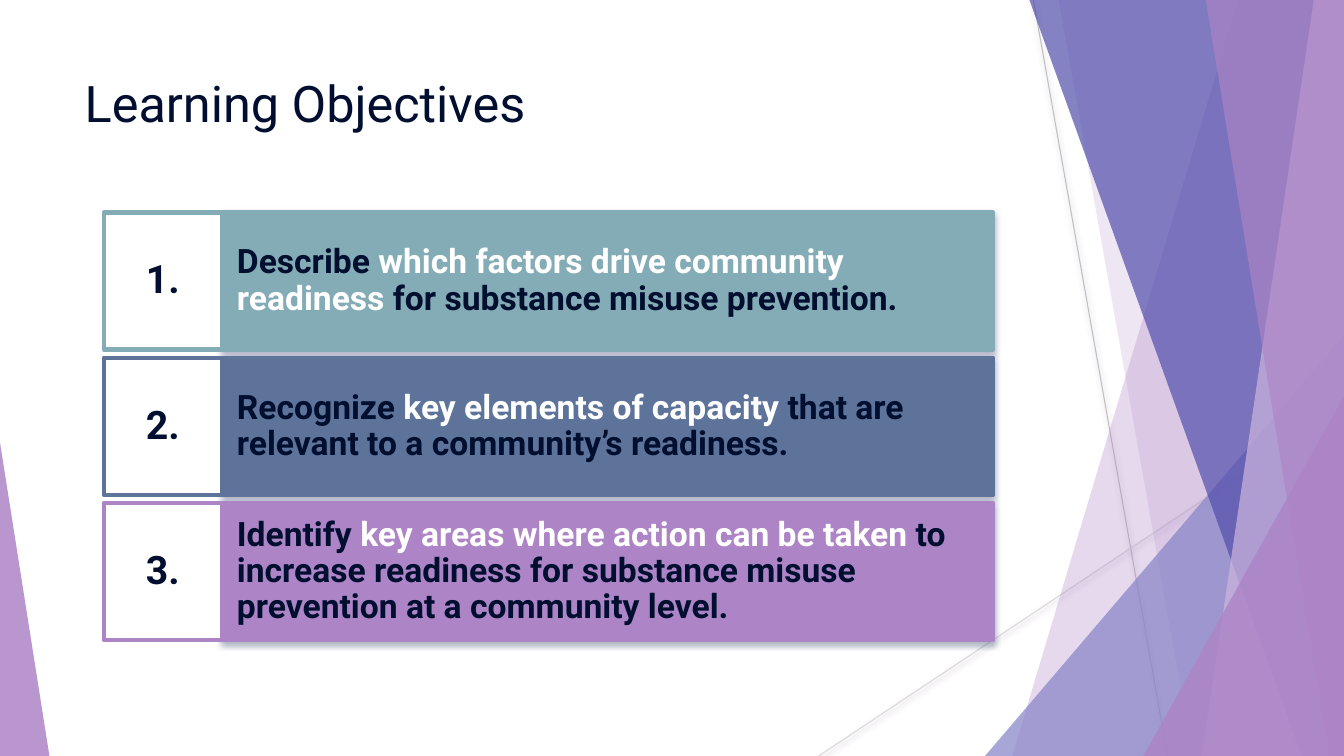
"""Build the learning objectives slide with its faceted purple backdrop."""
from dataclasses import dataclass

from lxml import etree
from pptx import Presentation
from pptx.dml.color import RGBColor
from pptx.enum.shapes import MSO_CONNECTOR, MSO_SHAPE
from pptx.enum.text import MSO_ANCHOR, MSO_AUTO_SIZE, PP_ALIGN
from pptx.oxml.ns import qn
from pptx.util import Inches, Pt

RECT, WEDGE = MSO_SHAPE.RECTANGLE, MSO_SHAPE.ISOSCELES_TRIANGLE
LINE = MSO_CONNECTOR.STRAIGHT
LEFT, MID = PP_ALIGN.LEFT, PP_ALIGN.CENTER
TOP, CORE = MSO_ANCHOR.TOP, MSO_ANCHOR.MIDDLE
WIDE, HIGH = 13.33, 7.5
FONT = "Roboto"
HUES = {
    "navy": "000E2F", "white": "FFFFFF", "teal": "84ACB6", "slate": "5D739A",
    "mauve": "AD84C6", "lilac": "CEB5DD", "haze": "8784C7", "iris": "524EAB",
    "grey": "BFBFBF", "pale": "D9D9D9", "dusk": "69447F",
    "plum": "474480", "grape": "374174", "ink": "2E4264",
}


@dataclass
class Ray:
    start: tuple[float, float]
    end: tuple[float, float]
    hue: str


@dataclass
class Band:
    """A facet that runs from the top edge to the foot along the right side."""
    head: float
    foot: float
    hue: str
    alpha: int


@dataclass
class Peak:
    """A right-angled wedge that stands on the bottom edge."""
    left: float
    top: float
    width: float
    lean: int
    hue: str
    alpha: int


@dataclass
class Goal:
    verb: str
    key: str
    rest: str
    hue: str
    shade: str


RAYS = [
    Ray((10.25, 0), (11.58, HIGH), "grey"),
    Ray((WIDE, 4.03), (8.12, HIGH), "pale"),
]
FACETS = [
    Band(12.28, 10.04, "mauve", 30),
    Band(10.5, 11.83, "mauve", 20),
    Peak(9.77, 3.33, 3.56, 1, "haze", 72),
    Band(10.21, 12.91, "iris", 70),
    Band(13.03, 11.92, "lilac", 70),
    Band(11.96, 13.18, "mauve", 65),
    Peak(11.34, 3.93, 1.99, 1, "mauve", 80),
    Peak(0, 4.39, 0.49, 0, "mauve", 85),
]
GOALS = [
    Goal("Describe ", "which factors drive community readiness",
         " for substance misuse prevention.", "teal", "plum"),
    Goal("Recognize ", "key elements of capacity ",
         "that are relevant to a community’s readiness.", "slate", "grape"),
    Goal("Identify ", "key areas where action can be taken ",
         "to increase readiness for substance misuse prevention at a "
         "community level.", "mauve", "ink"),
]


def tint(hue: str) -> RGBColor:
    """Return the named colour."""
    return RGBColor.from_string(HUES[hue])


def shade(item, hue: str) -> None:
    """Give an item a soft shadow straight below it."""
    glow = etree.SubElement(item._element.spPr, qn("a:effectLst"))
    drop = etree.SubElement(glow, qn("a:outerShdw"), blurRad=str(Pt(4)),
                            dist=str(Pt(2)), dir="5400000", rotWithShape="0")
    base = etree.SubElement(drop, qn("a:srgbClr"), val=HUES[hue])
    etree.SubElement(base, qn("a:alpha"), val="38000")


def write(item, *runs: tuple[str, str], size: int, bold: bool = False,
          align=LEFT, anchor=CORE, space: float = 1.0,
          inset: tuple[float, float] = (0.1, 0.05)) -> None:
    """Fill an item with one paragraph of coloured runs."""
    frame = item.text_frame
    frame.word_wrap, frame.auto_size = True, MSO_AUTO_SIZE.NONE
    frame.vertical_anchor = anchor
    frame.margin_left = frame.margin_right = Inches(inset[0])
    frame.margin_top = frame.margin_bottom = Inches(inset[1])
    para = frame.paragraphs[0]
    para.alignment, para.line_spacing = align, space
    for words, hue in runs:
        run = para.add_run()
        run.text = words
        run.font.name, run.font.size, run.font.bold = FONT, Pt(size), bold
        run.font.color.rgb = tint(hue)


def draw_ray(slide, ray: Ray) -> None:
    """Draw a thin backdrop line."""
    ends = [Inches(n) for n in (*ray.start, *ray.end)]
    line = slide.shapes.add_connector(LINE, *ends)
    line.line.color.rgb, line.line.width = tint(ray.hue), Pt(0.75)
    shade(line, "dusk")


def draw_facet(slide, facet: Band | Peak) -> None:
    """Draw a translucent band or wedge."""
    if isinstance(facet, Band):
        path = slide.shapes.build_freeform(Inches(facet.head), 0)
        path.add_line_segments([
            (Inches(x), Inches(y))
            for x, y in ((WIDE, 0), (WIDE, HIGH), (facet.foot, HIGH))])
        shape = path.convert_to_shape()
    else:
        shape = slide.shapes.add_shape(
            WEDGE, Inches(facet.left), Inches(facet.top),
            Inches(facet.width), Inches(HIGH - facet.top))
        shape.adjustments[0] = facet.lean
    shape.shadow.inherit = False
    shape.fill.solid()
    shape.fill.fore_color.rgb = tint(facet.hue)
    shape.line.fill.background()
    base = shape._element.spPr.find(qn("a:solidFill")).find(qn("a:srgbClr"))
    etree.SubElement(base, qn("a:alpha"), val=str(facet.alpha * 1000))


def draw_box(slide, left: float, top: float, width: float, fill: str,
             edge: str):
    """Draw one framed cell of a goal row."""
    box = slide.shapes.add_shape(RECT, Inches(left), Inches(top),
                                 Inches(width), Inches(1.36))
    box.fill.solid()
    box.fill.fore_color.rgb = tint(fill)
    box.line.color.rgb, box.line.width = tint(edge), Pt(3.15)
    return box


def draw_goal(slide, rank: int, goal: Goal) -> None:
    """Draw a numbered goal row."""
    top = 2.11 + 1.44 * (rank - 1)
    panel = draw_box(slide, 2.2, top, 7.65, goal.hue, goal.hue)
    shade(panel, goal.shade)
    write(panel, (goal.verb, "navy"), (goal.key, "white"),
          (goal.rest, "navy"), size=24, bold=True, space=0.9,
          inset=(0.15, 0.35))
    badge = draw_box(slide, 1.03, top, 1.17, "white", goal.hue)
    badge.shadow.inherit = False
    write(badge, (f"{rank}.", "navy"), size=28, bold=True, align=MID,
          space=0.9, inset=(0.1, 0.13))


def main() -> None:
    """Build and save the slide."""
    deck = Presentation()
    deck.slide_width, deck.slide_height = Inches(WIDE), Inches(HIGH)
    slide = deck.slides.add_slide(deck.slide_layouts[5])
    for ray in RAYS:
        draw_ray(slide, ray)
    for facet in FACETS:
        draw_facet(slide, facet)
    title = slide.shapes.title
    title.left, title.top = Inches(0.74), Inches(0.67)
    title.width, title.height = Inches(9.4), Inches(1.44)
    write(title, ("Learning Objectives", "navy"), size=36, anchor=TOP)
    for rank, goal in enumerate(GOALS, 1):
        draw_goal(slide, rank, goal)
    deck.save("out.pptx")


if __name__ == "__main__":
    main()
